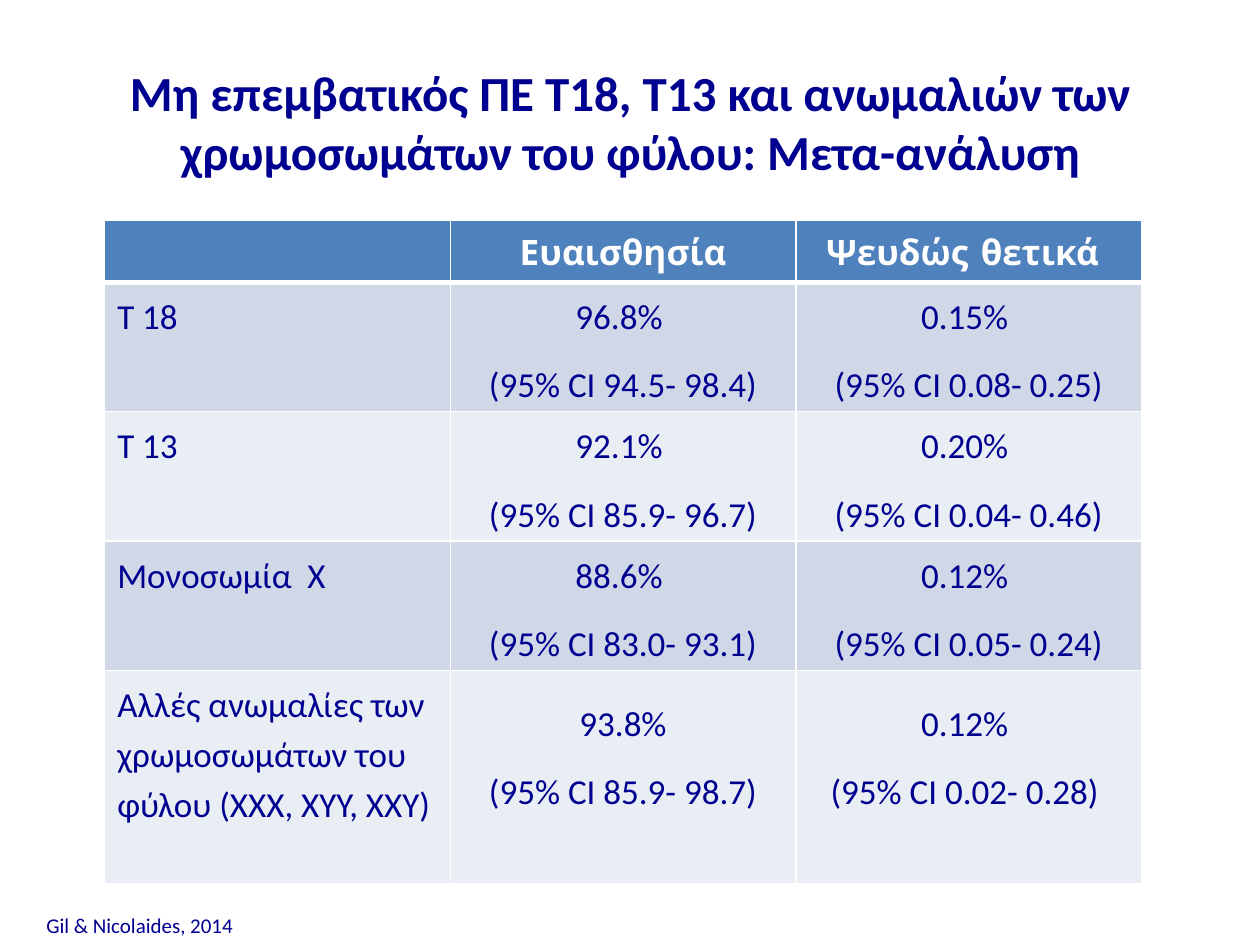
from dataclasses import dataclass
from typing import Any

from lxml.etree import SubElement
from pptx import Presentation
from pptx.dml.color import RGBColor
from pptx.enum.text import MSO_ANCHOR as Anchor, MSO_AUTO_SIZE as AutoSize, PP_ALIGN as Align
from pptx.oxml.ns import qn
from pptx.util import Pt

NAVY = "000090"
WHITE = "FFFFFF"
HEADER_FILL = "4F81BD"
BAND_FILLS = ("D0D8E8", "E9EDF4")
HEADER_SPACING = 1.17
INTERVAL_SPACING = 1.6
COLUMN_WIDTH = 197.5


@dataclass
class Result:
    condition: str
    sensitivity: tuple[str, str]
    false_positives: tuple[str, str]
    height: float = 74
    first_spacing: float = HEADER_SPACING


HEADERS = ("", "Ευαισθησία", "Ψευδώς θετικά ")
RESULTS = (
    Result("T 18", ("96.8% ", "(95% CI 94.5- 98.4)"), ("0.15% ", "(95% CI 0.08- 0.25)")),
    Result("T 13", ("92.1% ", "(95% CI 85.9- 96.7)"), ("0.20% ", "(95% CI 0.04- 0.46)")),
    Result("Mονοσωμία  X", ("88.6% ", "(95% CI 83.0- 93.1)"), ("0.12% ", "(95% CI 0.05- 0.24)")),
    Result(
        "Αλλές ανωμαλίες των χρωμοσωμάτων του φύλου (ΧΧΧ, ΧΥΥ, ΧΧΥ)",
        ("93.8%", "(95% CI 85.9- 98.7)"),
        ("0.12% ", "(95% CI 0.02- 0.28) "),
        122,
        INTERVAL_SPACING,
    ),
)


def color(value: str) -> RGBColor:
    return RGBColor.from_string(value)


def apply(target: Any, values: dict[str, Any]) -> None:
    for name, value in values.items():
        setattr(target, name, value)


def write(paragraph: Any, text: str, size: float, fill: str = NAVY, bold: bool = False,
          font: str = "Calibri", **layout: Any) -> None:
    run = paragraph.add_run()
    run.text = text
    apply(run.font, {"name": font, "size": Pt(size), "bold": bold})
    run.font.color.rgb = color(fill)
    apply(paragraph, layout)


def style_cell(cell: Any, fill: str, bottom_width: float = 1) -> None:
    properties = cell._tc.get_or_add_tcPr()
    for side, width in (("L", 1), ("R", 1), ("T", 1), ("B", bottom_width)):
        line = SubElement(properties, qn(f"a:ln{side}"), w=str(Pt(width)))
        solid = SubElement(line, qn("a:solidFill"))
        SubElement(solid, qn("a:srgbClr"), val=WHITE)
    cell.fill.solid()
    cell.fill.fore_color.rgb = color(fill)


def add_title(slide: Any) -> None:
    title = slide.shapes.title
    apply(title, {"left": Pt(23), "top": Pt(25.2), "width": Pt(674), "height": Pt(122.4)})
    apply(title.text_frame, {
        "auto_size": AutoSize.NONE,
        "word_wrap": True,
        "vertical_anchor": Anchor.MIDDLE,
        "margin_bottom": Pt(37.8),
    })
    write(title.text_frame.paragraphs[0],
          "Μη επεμβατικός ΠΕ T18, T13 και ανωμαλιών των χρωμοσωμάτων του φύλου: Μετα-ανάλυση",
          28, bold=True, alignment=Align.CENTER)


def add_citation(slide: Any) -> None:
    box = slide.shapes.add_textbox(Pt(19.4), Pt(517.7), Pt(122.4), Pt(22.3))
    apply(box.text_frame, {"word_wrap": False, "auto_size": AutoSize.SHAPE_TO_FIT_TEXT})
    write(box.text_frame.paragraphs[0], "Gil & Nicolaides, 2014", 12)


def fill_result(table: Any, row: int, result: Result) -> None:
    table.rows[row].height = Pt(result.height)
    cells = table.rows[row].cells
    for cell in cells:
        style_cell(cell, BAND_FILLS[(row - 1) % 2])
    write(cells[0].text_frame.paragraphs[0], result.condition, 20, line_spacing=HEADER_SPACING)
    for cell, (rate, interval) in zip(list(cells)[1:], (result.sensitivity, result.false_positives)):
        frame = cell.text_frame
        write(frame.paragraphs[0], rate, 20,
              alignment=Align.CENTER, line_spacing=result.first_spacing)
        write(frame.add_paragraph(), interval, 20,
              alignment=Align.CENTER, line_spacing=INTERVAL_SPACING)


def add_results(slide: Any) -> None:
    header_height = 34.3
    height = header_height + sum(result.height for result in RESULTS)
    table = slide.shapes.add_table(
        len(RESULTS) + 1, len(HEADERS), Pt(59.8), Pt(126),
        Pt(COLUMN_WIDTH * len(HEADERS)), Pt(height),
    ).table
    for column in table.columns:
        column.width = Pt(COLUMN_WIDTH)
    table.rows[0].height = Pt(header_height)
    for cell, text in zip(table.rows[0].cells, HEADERS):
        style_cell(cell, HEADER_FILL, 3)
        if text:
            write(cell.text_frame.paragraphs[0], text, 20, WHITE, True, "Comic Neue",
                  alignment=Align.CENTER, line_spacing=HEADER_SPACING)
    for row, result in enumerate(RESULTS, 1):
        fill_result(table, row, result)


def main() -> None:
    presentation = Presentation()
    apply(presentation, {"slide_width": Pt(720), "slide_height": Pt(540)})
    slide = presentation.slides.add_slide(presentation.slide_layouts[5])
    add_title(slide)
    add_citation(slide)
    add_results(slide)
    presentation.save("out.pptx")


if __name__ == "__main__":
    main()
